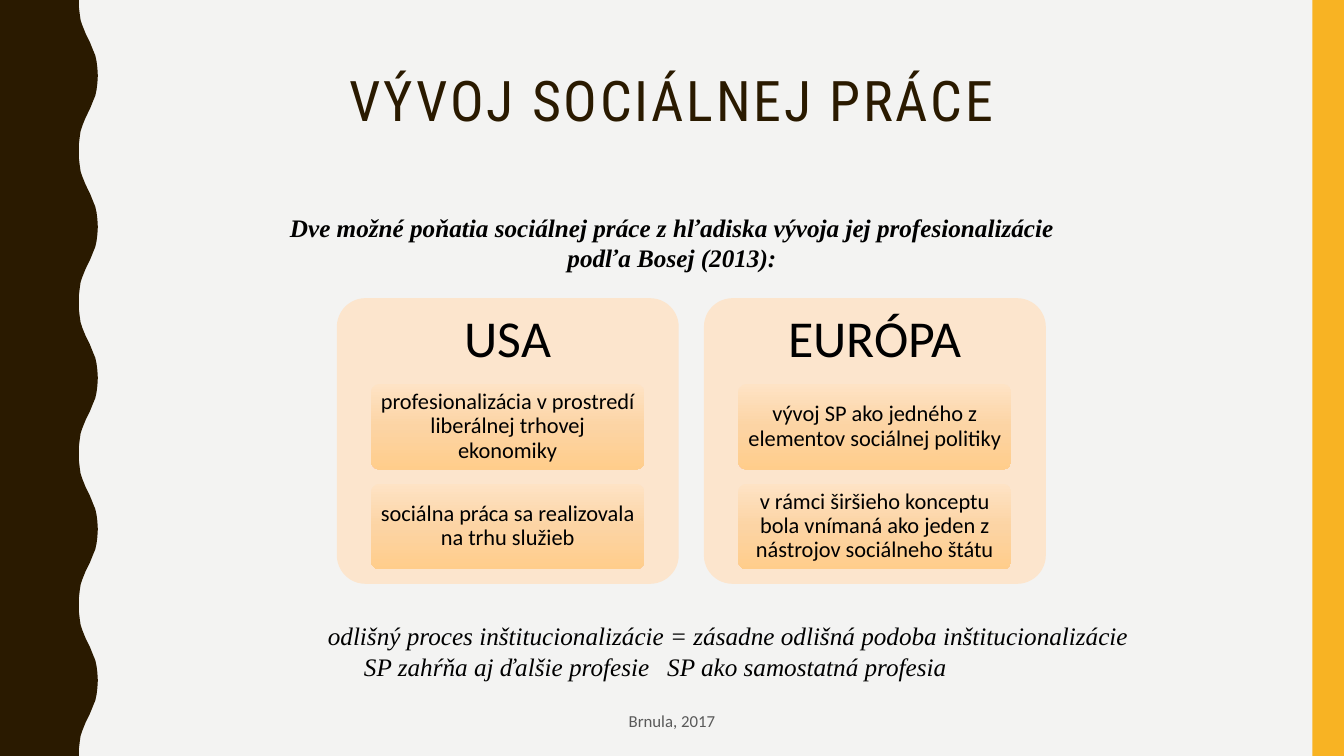
import copy
from dataclasses import dataclass

import pptx
import pptx.dml.color
import pptx.enum.shapes
import pptx.enum.text
import pptx.oxml.ns
import pptx.util

ALIGN = pptx.enum.text.PP_ALIGN
ANCHOR = pptx.enum.text.MSO_ANCHOR
SHAPE = pptx.enum.shapes.MSO_SHAPE

COLUMNS, ROWS = 160, 90
COLORS = {
    "background": "F3F3F2", "brown": "2A1A00", "yellow": "F8B323",
    "panel": "FCE5CD", "card_top": "FEE3C5", "card_middle": "FCD4A4",
    "card_bottom": "FFCD8B", "text": "000000", "footer": "595959",
}
# Rightmost edge of the wave between a trough and the next crest: (column, row)
HALF_WAVE = [
    (9.4, 0), (9.4, 0.84), (9.5, 1.68), (9.6, 2.4), (9.8, 3), (10, 3.5),
    (10.2, 4), (10.45, 4.5), (10.7, 5), (10.9, 5.5), (11.1, 6),
    (11.35, 6.6), (11.5, 7.3), (11.6, 8.1), (11.65, 9),
]
WAVE_ROWS = 18


@dataclass(frozen=True)
class Area:
    """Place on the grid, in columns and rows."""
    left: float
    top: float
    width: float
    height: float


@dataclass(frozen=True)
class TextStyle:
    size: float
    font: str = "Calibri"
    color: str = "text"
    bold: bool = False
    italic: bool = False


@dataclass(frozen=True)
class Panel:
    heading: str
    cards: tuple[str, ...]


PANELS = [
    Panel("USA", ("profesionalizácia v prostredí liberálnej trhovej ekonomiky",
                  "sociálna práca sa realizovala na trhu služieb")),
    Panel("EURÓPA", ("vývoj SP ako jedného z elementov sociálnej politiky",
                     "v rámci širšieho konceptu bola vnímaná ako jeden z "
                     "nástrojov sociálneho štátu")),
]
FIRST_PANEL = Area(40.1, 35.5, 40.7, 34)
PANEL_STEP = 43.7
CARD = Area(4.07, 10.2, 32.55, 10.2)  # relative to its panel
CARD_STEP = 11.88

presentation = pptx.Presentation()
presentation.slide_width = pptx.util.Emu(12192000)
presentation.slide_height = pptx.util.Emu(6858000)


def column(count: float) -> pptx.util.Emu:
    return pptx.util.Emu(round(presentation.slide_width * count / COLUMNS))


def row(count: float) -> pptx.util.Emu:
    return pptx.util.Emu(round(presentation.slide_height * count / ROWS))


def bounds(area: Area) -> tuple:
    return column(area.left), row(area.top), column(area.width), row(area.height)


def color(name: str):
    return pptx.dml.color.RGBColor.from_string(COLORS[name])


def paint(shape, fill: str) -> None:
    shape.shadow.inherit = False
    shape.fill.solid()
    shape.fill.fore_color.rgb = color(fill)
    shape.line.fill.background()


def add_block(slide, kind, area: Area, fill: str):
    shape = slide.shapes.add_shape(kind, *bounds(area))
    paint(shape, fill)
    if kind == SHAPE.ROUNDED_RECTANGLE:
        shape.adjustments[0] = 0.1
    return shape


def add_wave(slide) -> None:
    edge = []
    for start in range(0, ROWS, WAVE_ROWS):
        edge += [(x, start + y) for x, y in HALF_WAVE]
        edge += [(x, start + WAVE_ROWS - y) for x, y in reversed(HALF_WAVE[:-1])]
    builder = slide.shapes.build_freeform(0, 0)
    builder.add_line_segments([(column(x), row(y)) for x, y in edge + [(0, ROWS)]])
    paint(builder.convert_to_shape(), "brown")


def format_frame(shape, anchor, inset_x: float = 1.2, inset_y: float = 0.6):
    frame = shape.text_frame
    frame.word_wrap = True
    frame.auto_size = pptx.enum.text.MSO_AUTO_SIZE.NONE
    frame.vertical_anchor = anchor
    frame.margin_left = frame.margin_right = column(inset_x)
    frame.margin_top = frame.margin_bottom = row(inset_y)
    return frame


def write(paragraph, text: str, style: TextStyle, spacing: float = 1.0,
          alignment=ALIGN.CENTER):
    paragraph.alignment = alignment
    paragraph.line_spacing = spacing
    run = paragraph.add_run()
    run.text = text
    run.font.size = pptx.util.Pt(style.size)
    run.font.name = style.font
    run.font.bold = style.bold
    run.font.italic = style.italic
    run.font.color.rgb = color(style.color)
    return run


def add_text(slide, area: Area, text: str, style: TextStyle,
             anchor=ANCHOR.MIDDLE, spacing: float = 1.0) -> None:
    box = slide.shapes.add_textbox(*bounds(area))
    write(format_frame(box, anchor).paragraphs[0], text, style, spacing)


def add_card(slide, area: Area, text: str) -> None:
    card = add_block(slide, SHAPE.ROUNDED_RECTANGLE, area, "panel")
    card.fill.gradient()
    card.fill.gradient_angle = 270
    top, bottom = card.fill.gradient_stops
    top.color.rgb, top.position = color("card_top"), 0
    bottom.color.rgb, bottom.position = color("card_bottom"), 1
    stops = card._element.spPr.find(".//" + pptx.oxml.ns.qn("a:gsLst"))
    stops.insert(1, copy.deepcopy(stops[0]))
    middle = card.fill.gradient_stops[1]
    middle.color.rgb, middle.position = color("card_middle"), 0.5
    frame = format_frame(card, ANCHOR.MIDDLE, 0.75, 0.7)
    write(frame.paragraphs[0], text, TextStyle(16), 0.9)


def add_panel(slide, panel: Panel, area: Area) -> None:
    add_block(slide, SHAPE.ROUNDED_RECTANGLE, area, "panel")
    add_text(slide, Area(area.left, area.top, area.width, CARD.top),
             panel.heading, TextStyle(37), spacing=0.9)
    for index, text in enumerate(panel.cards):
        top = area.top + CARD.top + index * CARD_STEP
        add_card(slide, Area(area.left + CARD.left, top, CARD.width, CARD.height), text)


def add_conclusion(slide, style: TextStyle) -> None:
    box = slide.shapes.add_textbox(*bounds(Area(24.25, 73.3, 111.5, 8.5)))
    frame = format_frame(box, ANCHOR.TOP)
    frame.margin_right = 0
    process = frame.paragraphs[0]
    write(process, "odlišný proces inštitucionalizácie = zásadne odlišná "
                   "podoba inštitucionalizácie", style)
    process._p.get_or_add_pPr().set("marL", str(column(12.2)))
    professions = frame.add_paragraph()
    write(professions, "SP zahŕňa aj ďalšie profesie\tSP ako samostatná profesia",
          style, alignment=ALIGN.LEFT)
    properties = professions._p.get_or_add_pPr()
    properties.set("marL", "0")
    properties.set("indent", str(column(17.9)))
    tabs = properties.makeelement(pptx.oxml.ns.qn("a:tabLst"), {})
    tab = {"pos": str(column(57.85)), "algn": "l"}
    tabs.append(tabs.makeelement(pptx.oxml.ns.qn("a:tab"), tab))
    properties.append(tabs)


def main() -> None:
    slide = presentation.slides.add_slide(presentation.slide_layouts[5])
    slide.background.fill.solid()
    slide.background.fill.fore_color.rgb = color("background")
    add_wave(slide)
    add_block(slide, SHAPE.RECTANGLE, Area(156.25, 0, 3.75, ROWS), "yellow")

    title = slide.shapes.title
    title.left, title.top, title.width, title.height = bounds(
        Area(24.25, 8.15, 111.5, 11.3))
    heading = write(format_frame(title, ANCHOR.TOP).paragraphs[0],
                    "VÝVOJ SOCIÁLNEJ PRÁCE",
                    TextStyle(40, "Roboto Condensed", "brown"), 0.9)
    heading.font._element.set("spc", "200")

    for index, panel in enumerate(PANELS):
        left = FIRST_PANEL.left + index * PANEL_STEP
        add_panel(slide, panel, Area(left, FIRST_PANEL.top, FIRST_PANEL.width,
                                     FIRST_PANEL.height))
    add_text(slide, Area(32.75, 24.7, 94.5, 8.5),
             "Dve možné poňatia sociálnej práce z hľadiska vývoja jej "
             "profesionalizácie podľa Bosej (2013):",
             TextStyle(18, "Times New Roman", bold=True, italic=True), ANCHOR.TOP)
    add_conclusion(slide, TextStyle(18, "Times New Roman", italic=True))
    add_text(slide, Area(53, 83.6, 54, 4.5), "Brnula, 2017",
             TextStyle(12, color="footer"))
    presentation.save("out.pptx")


if __name__ == "__main__":
    main()
